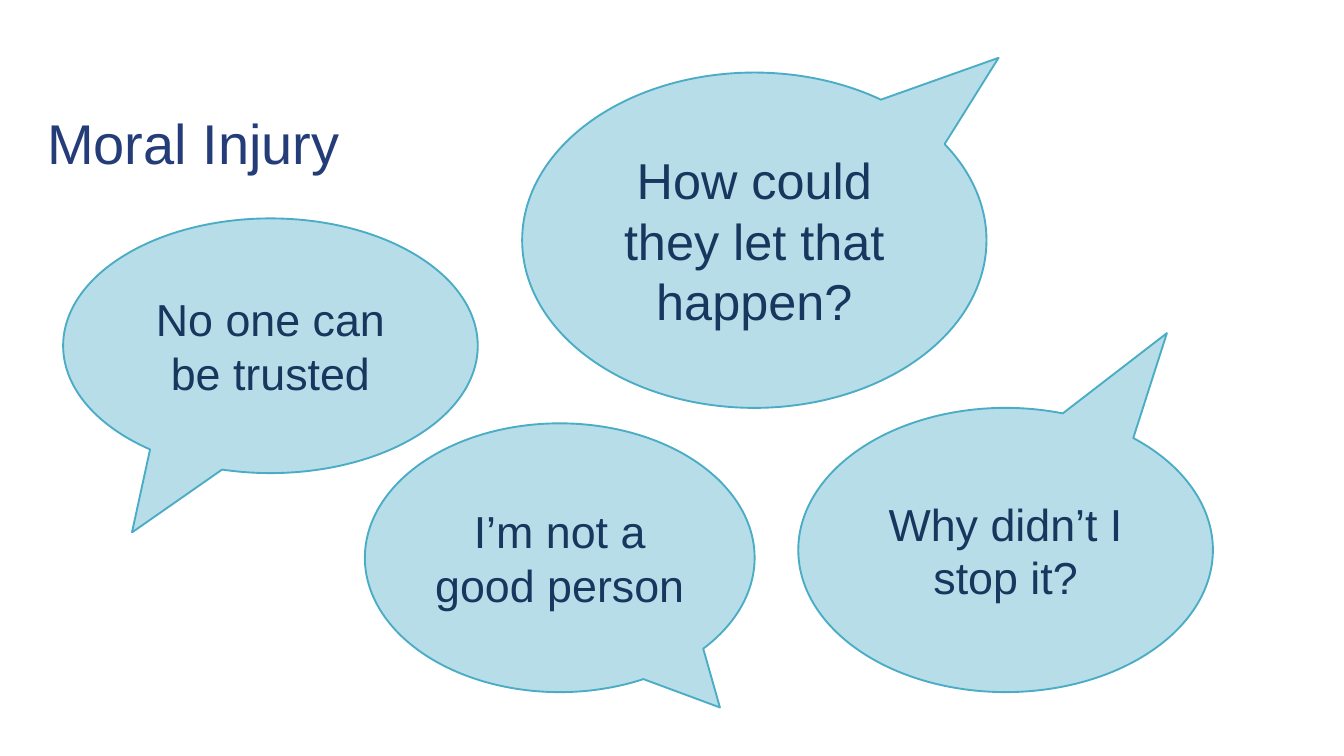
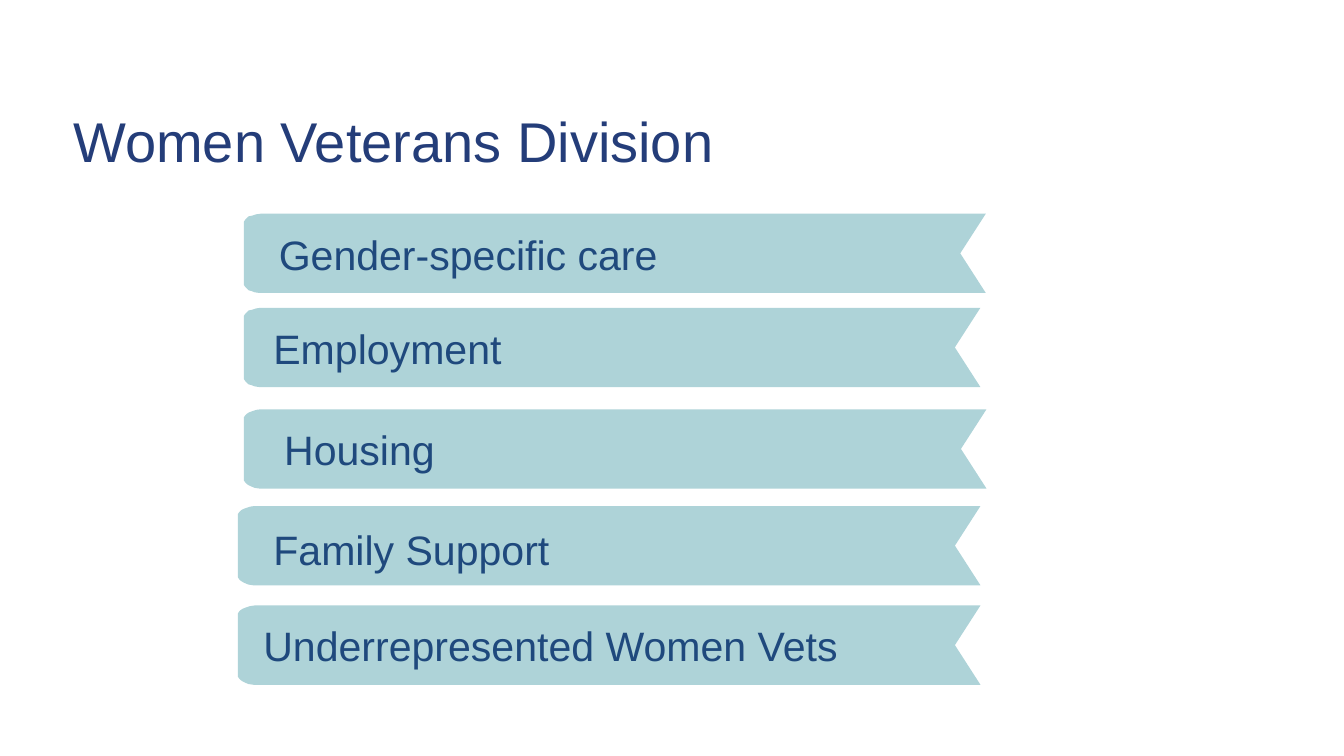
from typing import NamedTuple

from pptx import Presentation
from pptx.dml.color import RGBColor
from pptx.enum.shapes import MSO_SHAPE
from pptx.enum.text import MSO_ANCHOR, MSO_AUTO_SIZE, PP_ALIGN
from pptx.shapes.autoshape import Shape
from pptx.slide import Slide
from pptx.util import Emu, Pt

SCALE = 9144
FONT = "Arial"
TITLE = "243D79"
BUBBLE = "B7DEE8"
EDGE = "4BACC6"
SPEECH = "17375E"
BAND = "AED3D8"
LABEL = "1F497D"
BAND_HIGH = 118
LABEL_HIGH = 84
CURVE_STEPS = 8

Point = tuple[float, float]


class Bubble(NamedTuple):
    text: str
    left: int
    top: int
    width: int
    height: int
    tip: Point
    size: int = 48


class Ribbon(NamedTuple):
    text: str
    left: int
    right: int
    top: int
    text_left: int
    text_top: int
    text_width: int = 988


BUBBLES = [
    Bubble("How could they let that happen?", 777, 108, 691, 499, (0.526, -0.544), 54),
    Bubble("I’m not a good person", 543, 630, 580, 400, (0.411, 0.557)),
    Bubble("No one can be trusted", 94, 325, 617, 379, (-0.334, 0.733)),
    Bubble("Why didn’t I stop it?", 1188, 607, 617, 423, (0.389, -0.763)),
]

RIBBONS = [
    Ribbon("Gender-specific care", 363, 1467, 318, 405, 336),
    Ribbon("Employment", 363, 1459, 458, 397, 476, 1019),
    Ribbon("Housing", 363, 1468, 609, 413, 627),
    Ribbon("Family Support", 354, 1459, 753, 397, 775),
    Ribbon("Underrepresented Women Vets", 354, 1459, 901, 382, 919),
]


def px(value: float) -> Emu:
    return Emu(round(value * SCALE))


def color(code: str) -> RGBColor:
    return RGBColor.from_string(code)


def write(shape: Shape, text: str, size: int, code: str) -> None:
    frame = shape.text_frame
    frame.word_wrap = True
    frame.text = text
    for run in frame.paragraphs[0].runs:
        run.font.name = FONT
        run.font.size = Pt(size)
        run.font.color.rgb = color(code)


def paint(shape: Shape, code: str) -> None:
    shape.shadow.inherit = False
    shape.fill.solid()
    shape.fill.fore_color.rgb = color(code)


def add_text(slide: Slide, left: int, top: int, width: int, height: int) -> Shape:
    return slide.shapes.add_textbox(px(left), px(top), px(width), px(height))


def add_title(slide: Slide, text: str, left: int, top: int) -> None:
    box = add_text(slide, left, top, 1868, 187)
    write(box, text, 60, TITLE)
    frame = box.text_frame
    frame.margin_left = frame.margin_right = 0
    frame.margin_top = frame.margin_bottom = 0
    frame.vertical_anchor = MSO_ANCHOR.BOTTOM
    frame.paragraphs[0].line_spacing = Pt(64.8)


def add_bubble(slide: Slide, item: Bubble) -> None:
    shape = slide.shapes.add_shape(
        MSO_SHAPE.OVAL_CALLOUT,
        px(item.left), px(item.top), px(item.width), px(item.height),
    )
    for index, value in enumerate(item.tip):
        shape.adjustments[index] = value
    paint(shape, BUBBLE)
    shape.line.color.rgb = color(EDGE)
    shape.line.width = Pt(2)
    write(shape, item.text, item.size, SPEECH)
    shape.text_frame.vertical_anchor = MSO_ANCHOR.MIDDLE
    shape.text_frame.paragraphs[0].alignment = PP_ALIGN.CENTER


def curve(*knots: Point) -> list[Point]:
    points = []
    for step in range(CURVE_STEPS + 1):
        t = step / CURVE_STEPS
        u = 1 - t
        parts = (u**3, 3 * u * u * t, 3 * u * t * t, t**3)
        x, y = (sum(w * v for w, v in zip(parts, axis)) for axis in zip(*knots))
        points.append((x, y))
    return points


def add_ribbon(slide: Slide, item: Ribbon) -> None:
    left, right, top = item.left, item.right, item.top
    base = top + BAND_HIGH
    lower = curve((left + 30, base), (left + 9, base), (left, base - 7), (left, base - 15))
    upper = curve((left, top + 15), (left, top + 7), (left + 8, top), (left + 34, top))
    notch = (right - 38, top + BAND_HIGH / 2)
    pen = slide.shapes.build_freeform(right, top, scale=SCALE)
    pen.add_line_segments([notch, (right, base), *lower, *upper], close=True)
    band = pen.convert_to_shape()
    paint(band, BAND)
    band.line.fill.background()
    box = add_text(slide, item.text_left, item.text_top, item.text_width, LABEL_HIGH)
    write(box, item.text, 44, LABEL)
    box.text_frame.auto_size = MSO_AUTO_SIZE.SHAPE_TO_FIT_TEXT


def main() -> None:
    deck = Presentation()
    deck.slide_width, deck.slide_height = px(2000), px(1125)
    blank = deck.slide_layouts[6]

    slide = deck.slides.add_slide(blank)
    add_title(slide, "Moral Injury", 70, 75)
    for bubble in BUBBLES:
        add_bubble(slide, bubble)

    slide = deck.slides.add_slide(blank)
    add_title(slide, "Women Veterans Division", 109, 71)
    for ribbon in RIBBONS:
        add_ribbon(slide, ribbon)

    deck.save("out.pptx")


if __name__ == "__main__":
    main()
